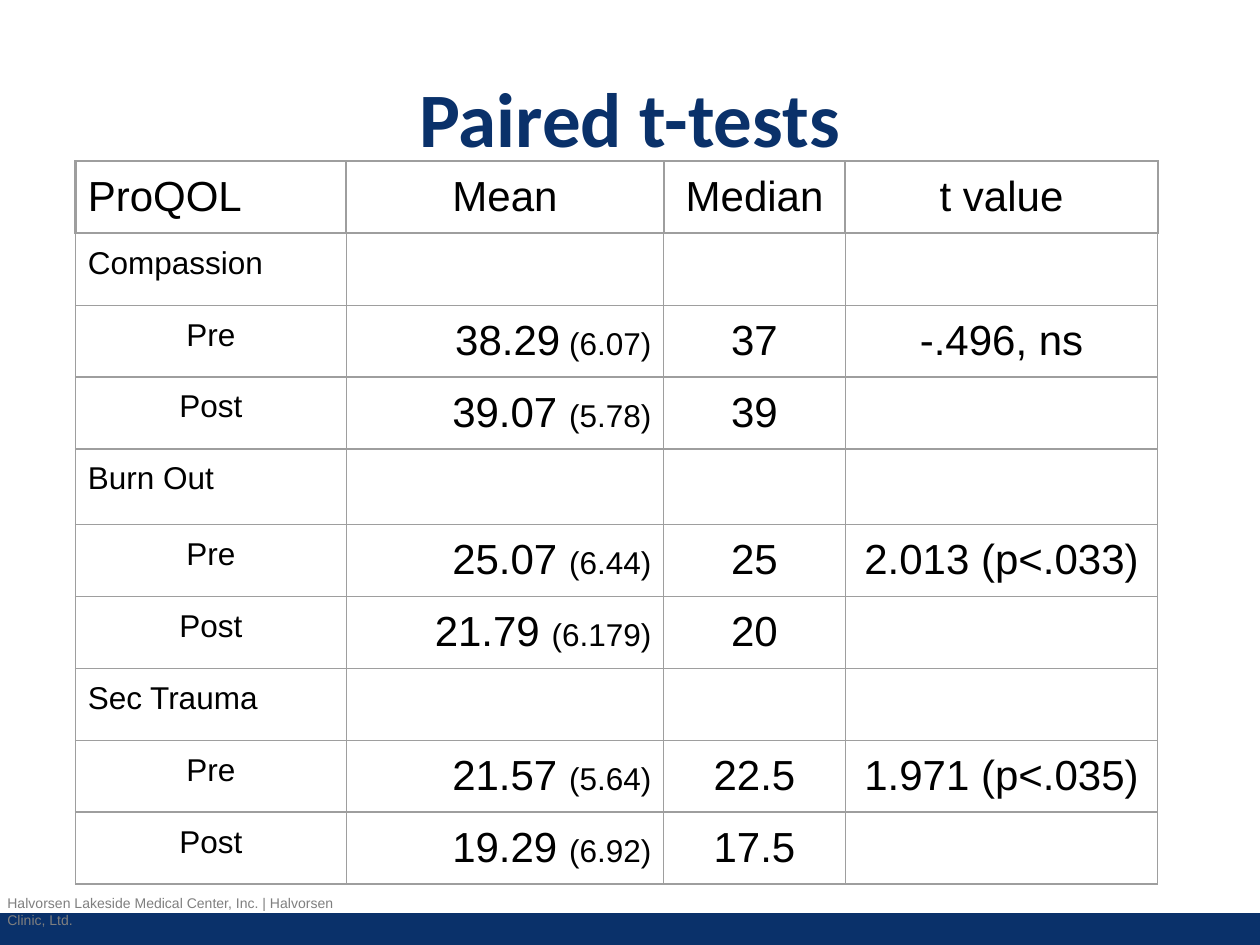
from typing import NamedTuple

from lxml.etree import SubElement
from pptx import Presentation
from pptx.dml.color import RGBColor
from pptx.enum.shapes import MSO_SHAPE
from pptx.enum.text import MSO_ANCHOR, PP_ALIGN
from pptx.oxml.ns import qn
from pptx.util import Cm, Pt

COLORS = {"navy": "0A316A", "grey": "7F7F7F", "rule": "9E9E9E", "black": "000000"}
COLUMN_WIDTHS = (5.46, 6.4, 3.66, 6.3)
ROW_HEIGHT, BURN_OUT_HEIGHT = 1.45, 1.52
HEADINGS = ("ProQOL", "Mean", "Median", "t value")
LARGE, SMALL = 24, 18
PADDING, BOTTOM_PADDING = 0.25, 0.12


class Measurement(NamedTuple):
    mean: str
    deviation: str
    median: str
    t_value: str = ""


class Scale(NamedTuple):
    name: str
    pre: Measurement
    post: Measurement
    height: float = ROW_HEIGHT


SCALES = (
    Scale("Compassion", Measurement("38.29", " (6.07)", "37", "-.496, ns"),
          Measurement("39.07 ", "(5.78)", "39")),
    Scale("Burn Out", Measurement("25.07 ", "(6.44)", "25", "2.013 (p<.033)"),
          Measurement("21.79 ", "(6.179)", "20"), BURN_OUT_HEIGHT),
    Scale("Sec Trauma", Measurement("21.57 ", "(5.64)", "22.5", "1.971 (p<.035)"),
          Measurement("19.29 ", "(6.92)", "17.5")),
)


def write(paragraph, text: str, *, size: float = LARGE, font: str = "Arial",
          color: str = "black", bold: bool = False, align=PP_ALIGN.LEFT) -> None:
    """Append a formatted run to a paragraph."""
    paragraph.alignment = align
    run = paragraph.add_run()
    run.text = text
    run.font.size = Pt(size)
    run.font.name = font
    run.font.bold = bold
    run.font.color.rgb = RGBColor.from_string(COLORS[color])


def add_label(slide, text: str, left: float, top: float, width: float, height: float,
              *, inset: float, anchor=MSO_ANCHOR.TOP, **style) -> None:
    """Place a wrapped text box with one line of styled text."""
    frame = slide.shapes.add_textbox(Cm(left), Cm(top), Cm(width), Cm(height)).text_frame
    frame.word_wrap = True
    frame.vertical_anchor = anchor
    frame.margin_top = frame.margin_bottom = Cm(inset)
    write(frame.paragraphs[0], text, **style)


def rule_cell(cell, row: int) -> None:
    """Draw the four borders of a cell, heavier around the heading row."""
    properties = cell._tc.get_or_add_tcPr()
    for side in "LRTB":
        heavy = row == 0 or (row == 1 and side == "T")
        border = SubElement(properties, qn(f"a:ln{side}"), w=str(Pt(1.5 if heavy else 0.75)))
        fill = SubElement(border, qn("a:solidFill"))
        SubElement(fill, qn("a:srgbClr"), val=COLORS["rule"])


def fill_measurement(cells, period: str, result: Measurement) -> None:
    """Write one period's results into a row of cells."""
    period_line, mean_line, median_line, t_line = (
        cell.text_frame.paragraphs[0] for cell in cells)
    write(period_line, period, size=SMALL, align=PP_ALIGN.CENTER)
    write(mean_line, result.mean, align=PP_ALIGN.RIGHT)
    write(mean_line, result.deviation, size=SMALL, align=PP_ALIGN.RIGHT)
    write(median_line, result.median, align=PP_ALIGN.CENTER)
    if result.t_value:
        write(t_line, result.t_value, align=PP_ALIGN.CENTER)


def add_results(slide) -> None:
    """Build the table of paired t-test results."""
    heights = [ROW_HEIGHT]
    for scale in SCALES:
        heights += [scale.height, ROW_HEIGHT, ROW_HEIGHT]
    results = slide.shapes.add_table(
        len(heights), len(COLUMN_WIDTHS), Cm(1.52), Cm(3.25),
        Cm(sum(COLUMN_WIDTHS)), Cm(sum(heights))).table
    results.first_row = results.horz_banding = False
    for column, width in zip(results.columns, COLUMN_WIDTHS):
        column.width = Cm(width)
    for index, (row, height) in enumerate(zip(results.rows, heights)):
        row.height = Cm(height)
        for cell in row.cells:
            cell.margin_left = cell.margin_right = cell.margin_top = Cm(PADDING)
            cell.margin_bottom = Cm(BOTTOM_PADDING)
            rule_cell(cell, index)
            cell.fill.background()
    for column, heading in enumerate(HEADINGS):
        write(results.cell(0, column).text_frame.paragraphs[0], heading,
              align=PP_ALIGN.CENTER if column else PP_ALIGN.LEFT)
    for index, scale in enumerate(SCALES):
        first = 1 + 3 * index
        write(results.cell(first, 0).text_frame.paragraphs[0], scale.name, size=SMALL)
        fill_measurement(results.rows[first + 1].cells, "Pre", scale.pre)
        fill_measurement(results.rows[first + 2].cells, "Post", scale.post)


def main() -> None:
    """Build and save the slide."""
    deck = Presentation()
    deck.slide_width, deck.slide_height = Cm(25.4), Cm(19.05)
    slide = deck.slides.add_slide(deck.slide_layouts[6])
    footer_bar = slide.shapes.add_shape(
        MSO_SHAPE.RECTANGLE, Cm(0), Cm(18.41), Cm(25.4), Cm(0.64))
    footer_bar.shadow.inherit = False
    footer_bar.fill.solid()
    footer_bar.fill.fore_color.rgb = RGBColor.from_string(COLORS["navy"])
    footer_bar.line.fill.background()
    add_label(slide, "Halvorsen Lakeside Medical Center, Inc. | Halvorsen Clinic, Ltd.",
              -0.1, 17.91, 7.7, 0.58, inset=0.13, size=8, color="grey")
    add_label(slide, "Paired t-tests", 1.27, 0.76, 22.86, 3.18, inset=PADDING,
              anchor=MSO_ANCHOR.MIDDLE, size=44, font="Calibri", color="navy",
              bold=True, align=PP_ALIGN.CENTER)
    add_results(slide)
    deck.save("out.pptx")


if __name__ == "__main__":
    main()
